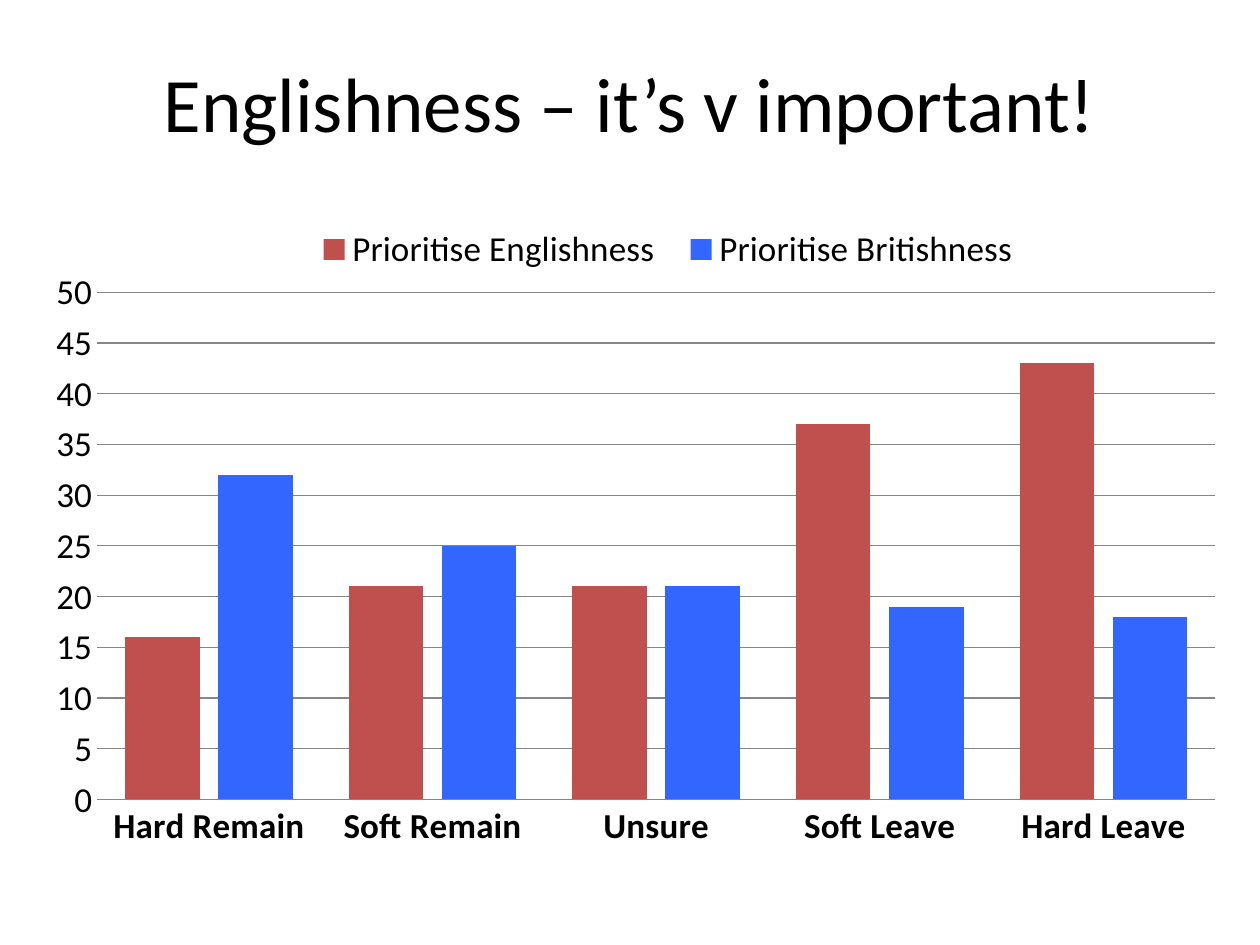
from lxml.etree import SubElement
from pptx import Presentation
from pptx.chart.data import CategoryChartData
from pptx.dml.color import RGBColor
from pptx.enum.chart import XL_CHART_TYPE, XL_LEGEND_POSITION, XL_TICK_MARK
from pptx.enum.text import MSO_ANCHOR, PP_ALIGN
from pptx.oxml.ns import qn
from pptx.util import Cm, Pt

TITLE = "Englishness – it’s v important!"
GROUPS = ["Hard Remain", "Soft Remain", "Unsure", "Soft Leave", "Hard Leave"]
PRIORITIES = [
    ("Prioritise Englishness", "english", [16, 21, 21, 37, 43]),
    ("Prioritise Britishness", "british", [32, 25, 21, 19, 18]),
]
COLOURS = {"english": "C0504D", "british": "3366FF", "text": "000000", "grid": "868686"}
FONT = "Calibri"


def colour(name):
    return RGBColor.from_string(COLOURS[name])


def style_font(font, size, bold=False):
    font.name = FONT
    font.size = Pt(size)
    font.bold = bold
    font.color.rgb = colour("text")


def place_part(part, index, x, y, w, h, target=()):
    for old in part.findall(qn("c:layout")):
        part.remove(old)
    layout = part.makeelement(qn("c:layout"))
    part.insert(index, layout)
    manual = SubElement(layout, qn("c:manualLayout"))
    settings = [*target, ("xMode", "edge"), ("yMode", "edge"), ("x", x), ("y", y), ("w", w), ("h", h)]
    for tag, value in settings:
        SubElement(manual, qn(f"c:{tag}")).set("val", str(value))


def add_title(slide):
    title = slide.shapes.add_textbox(Cm(1.27), Cm(0.76), Cm(22.86), Cm(2.57))
    frame = title.text_frame
    frame.word_wrap = True
    frame.vertical_anchor = MSO_ANCHOR.MIDDLE
    paragraph = frame.paragraphs[0]
    paragraph.alignment = PP_ALIGN.CENTER
    run = paragraph.add_run()
    run.text = TITLE
    style_font(run.font, 44)


def add_identity_chart(slide):
    data = CategoryChartData()
    data.categories = GROUPS
    for name, _, shares in PRIORITIES:
        data.add_series(name, shares)
    chart = slide.shapes.add_chart(
        XL_CHART_TYPE.COLUMN_CLUSTERED, Cm(1), Cm(4.3), Cm(23.98), Cm(13.28), data
    ).chart
    style_font(chart.font, 10)
    chart.has_title = False

    columns = chart.plots[0]
    columns.gap_width = 75
    columns.overlap = -25
    columns.vary_by_categories = False
    for series, (_, priority, _) in zip(columns.series, PRIORITIES):
        series.format.fill.solid()
        series.format.fill.fore_color.rgb = colour(priority)

    group_axis, share_axis = chart.category_axis, chart.value_axis
    for axis in (group_axis, share_axis):
        axis.major_tick_mark = axis.minor_tick_mark = XL_TICK_MARK.NONE
        style_font(axis.tick_labels.font, 20, bold=axis is group_axis)
    share_axis.minimum_scale, share_axis.maximum_scale, share_axis.major_unit = 0, 50, 5
    share_axis.has_major_gridlines = True
    share_axis.format.line.fill.background()
    for line in (group_axis.format.line, share_axis.major_gridlines.format.line):
        line.color.rgb = colour("grid")
        line.width = Pt(0.75)

    chart.has_legend = True
    legend = chart.legend
    legend.position = XL_LEGEND_POSITION.BOTTOM
    legend.include_in_layout = False
    style_font(legend.font, 20)

    plot_area = chart.element.find(".//" + qn("c:plotArea"))
    legend_area = chart.element.find(".//" + qn("c:legend"))
    place_part(plot_area, 0, 0.04, 0.12, 0.94, 0.77, target=[("layoutTarget", "inner")])
    place_part(legend_area, 1, 0.21, 0.01, 0.62, 0.09)


def main():
    deck = Presentation()
    deck.slide_width, deck.slide_height = Cm(25.4), Cm(19.05)
    slide = deck.slides.add_slide(deck.slide_layouts[6])
    add_title(slide)
    add_identity_chart(slide)
    deck.save("out.pptx")


if __name__ == "__main__":
    main()
